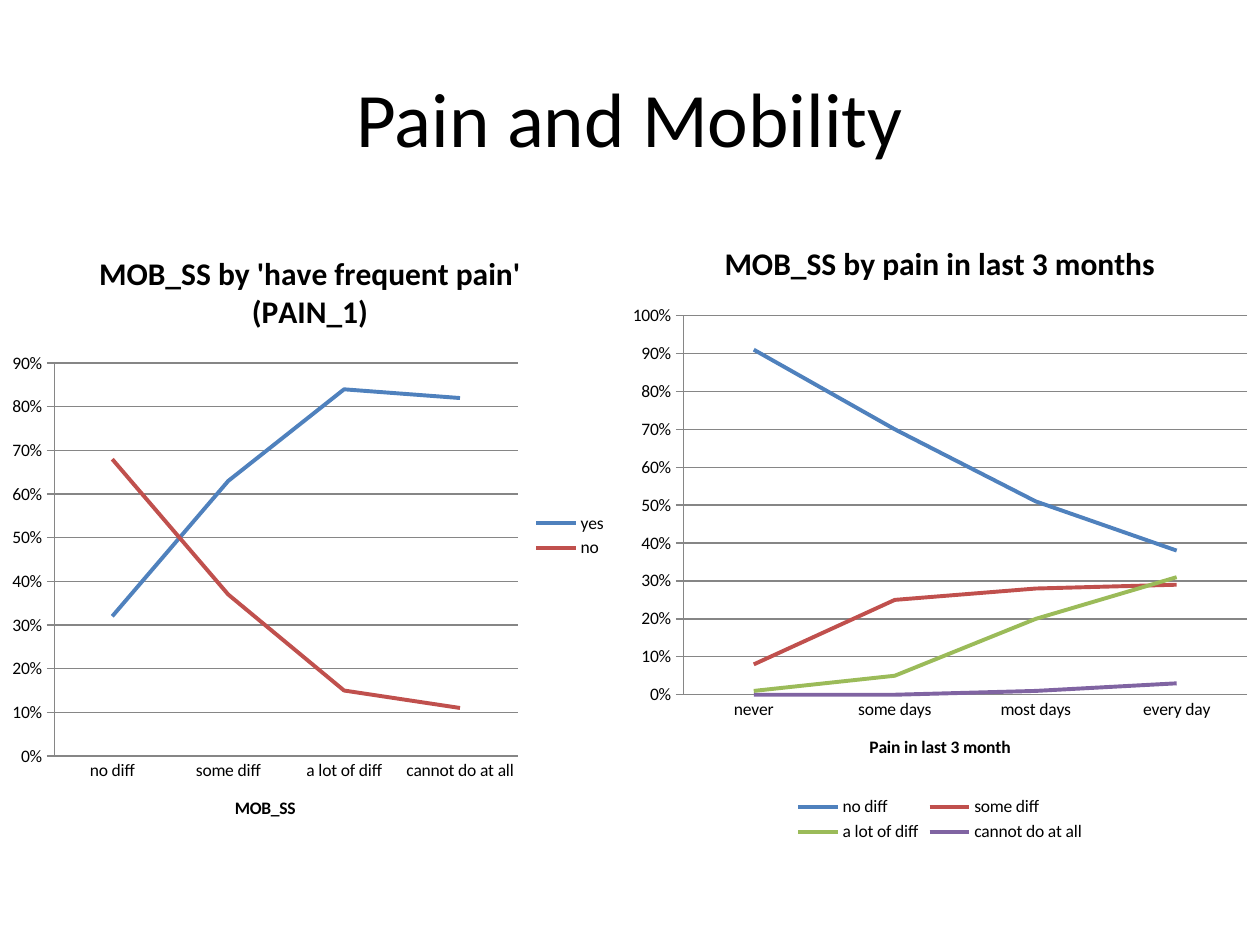
import pptx
import pptx.chart.data
import pptx.dml.color
import pptx.enum.chart
import pptx.enum.text
import pptx.util

Pt = pptx.util.Pt
RGB = pptx.dml.color.RGBColor
Legend = pptx.enum.chart.XL_LEGEND_POSITION
Tick = pptx.enum.chart.XL_TICK_MARK

FONT = "Calibri"
BLACK = RGB(0x00, 0x00, 0x00)
GRID = RGB(0x86, 0x86, 0x86)
BLUE = RGB(0x4F, 0x81, 0xBD)
RED = RGB(0xC0, 0x50, 0x4D)
GREEN = RGB(0x9B, 0xBB, 0x59)
PURPLE = RGB(0x80, 0x64, 0xA2)
SERIES_COLOURS = [BLUE, RED, GREEN, PURPLE]


def style_font(font, size, bold=False, colour=BLACK):
    font.name = FONT
    font.size = Pt(size)
    font.bold = bold
    font.color.rgb = colour


def write_text(frame, text, size, bold=False, colour=BLACK):
    frame.text = text
    paragraph = frame.paragraphs[0]
    paragraph.alignment = pptx.enum.text.PP_ALIGN.CENTER
    style_font(paragraph.runs[0].font, size, bold, colour)


class PainSlide:
    """Holds the current slide and the shared text sizes."""

    title_size, heading_size, label_size = 44, 18, 10

    def __init__(self, presentation):
        self.slide = presentation.slides.add_slide(presentation.slide_layouts[5])

    def title(self, text, left, top, width, height):
        heading = self.slide.shapes.title
        heading.left, heading.top = Pt(left), Pt(top)
        heading.width, heading.height = Pt(width), Pt(height)
        heading.text_frame.vertical_anchor = pptx.enum.text.MSO_ANCHOR.MIDDLE
        write_text(heading.text_frame, text, self.title_size)

    def line_chart(self, box, heading, axis_heading, categories, series, legend, top_value):
        data = pptx.chart.data.CategoryChartData(number_format="0%")
        data.categories = categories
        for name, values in series.items():
            data.add_series(name, values)
        chart = self.slide.shapes.add_chart(
            pptx.enum.chart.XL_CHART_TYPE.LINE, *map(Pt, box), data).chart
        style_font(chart.font, self.label_size)

        # Heading and legend
        chart.has_title = True
        write_text(chart.chart_title.text_frame, heading, self.heading_size, bold=True)
        chart.chart_title.include_in_layout = False
        chart.has_legend = True
        chart.legend.position = legend
        chart.legend.include_in_layout = False

        # Axes
        answers, share = chart.category_axis, chart.value_axis
        answers.major_tick_mark = Tick.NONE
        write_text(answers.axis_title.text_frame, axis_heading, self.label_size, bold=True)
        share.major_tick_mark = Tick.CROSS
        share.minimum_scale, share.maximum_scale, share.major_unit = 0, top_value, 0.1
        share.tick_labels.number_format = "0%"
        share.tick_labels.number_format_is_linked = False
        share.has_major_gridlines = True
        for line in (answers.format.line, share.format.line, share.major_gridlines.format.line):
            line.color.rgb = GRID
            line.width = Pt(0.75)

        # Lines
        chart.plots[0].vary_by_categories = False
        for line, colour in zip(chart.plots[0].series, SERIES_COLOURS):
            line.smooth = False
            line.marker.style = pptx.enum.chart.XL_MARKER_STYLE.NONE
            line.format.line.color.rgb = colour
            line.format.line.width = Pt(2.25)


def main():
    presentation = pptx.Presentation()
    presentation.slide_width, presentation.slide_height = Pt(720), Pt(540)
    page = PainSlide(presentation)
    page.title("Pain and Mobility", 36, 21.6, 648, 90)

    difficulty = ["no diff", "some diff", "a lot of diff", "cannot do at all"]

    # Frequent pain, by difficulty
    page.line_chart(
        (0, 129.6, 354.24, 352.8),
        "MOB_SS by 'have frequent pain' (PAIN_1)", "MOB_SS", difficulty,
        {"yes": (0.32, 0.63, 0.84, 0.82), "no": (0.68, 0.37, 0.15, 0.11)},
        Legend.RIGHT, 0.9)

    # Difficulty, by how often there was pain
    shares = [(0.91, 0.7, 0.51, 0.38), (0.08, 0.25, 0.28, 0.29),
              (0.01, 0.05, 0.2, 0.31), (0, 0, 0.01, 0.03)]
    page.line_chart(
        (354.24, 123.84, 365.76, 360),
        "MOB_SS by pain in last 3 months", "Pain in last 3 month",
        ["never", "some days", "most days", "every day"],
        dict(zip(difficulty, shares)), Legend.BOTTOM, 1)

    presentation.save("out.pptx")


if __name__ == "__main__":
    main()
